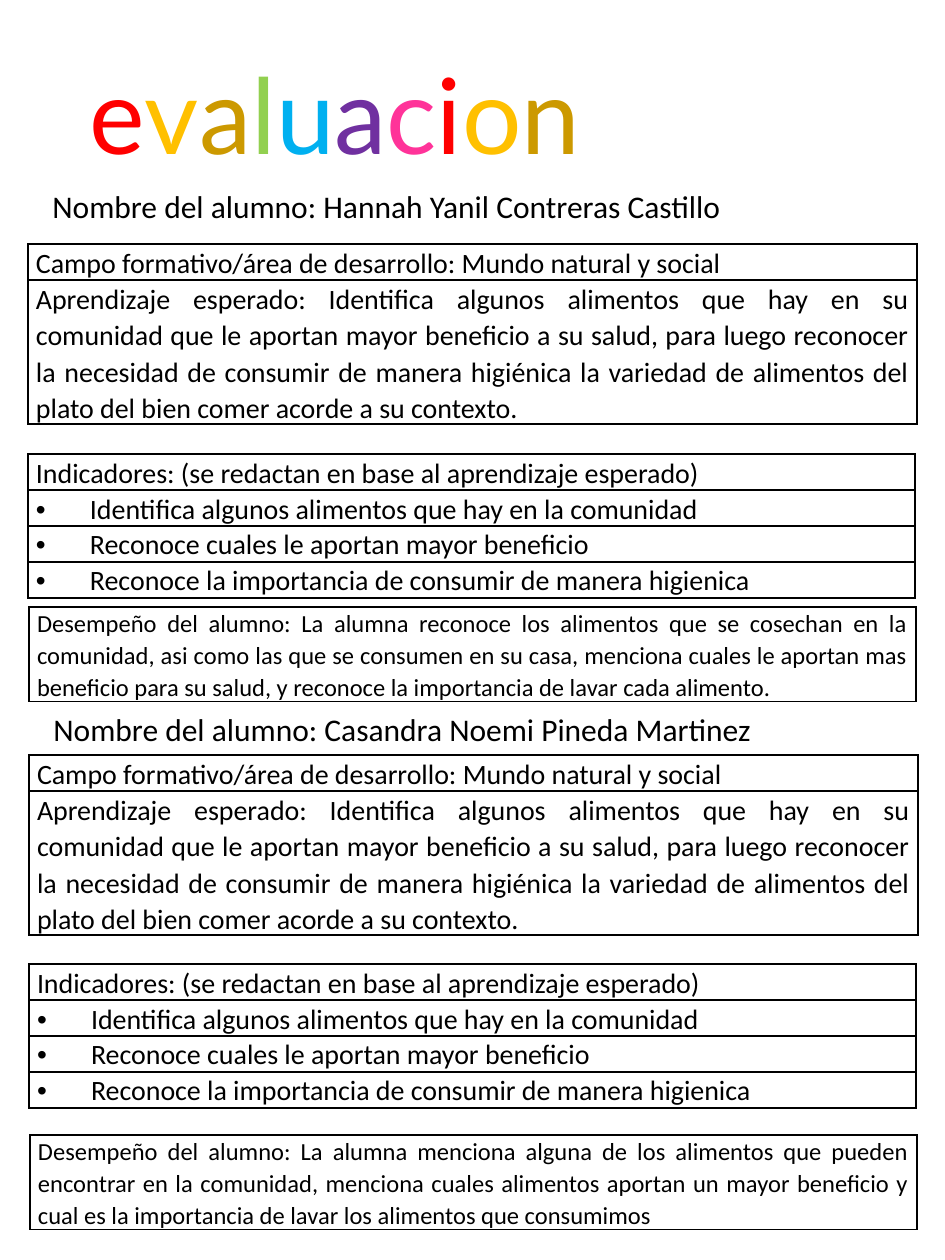
from lxml.etree import SubElement
from pptx import Presentation
from pptx.dml.color import RGBColor as RGB
from pptx.enum.text import MSO_AUTO_SIZE as Fit, PP_ALIGN as Align
from pptx.oxml.ns import qn
from pptx.util import Pt

BLACK = RGB(0, 0, 0)
RED = RGB(0xFF, 0, 0)
AMBER = RGB(0xFF, 0xC0, 0)
OCHRE = RGB(0xCC, 0x99, 0)
GREEN = RGB(0x92, 0xD0, 0x50)
BLUE = RGB(0, 0xB0, 0xF0)
PURPLE = RGB(0x70, 0x30, 0xA0)
PINK = RGB(0xFF, 0x33, 0x99)

TITLE = "evaluacion"
HUES = [RED, AMBER, OCHRE, GREEN, BLUE, PURPLE, PINK]

FIELD = [
    "Campo formativo/área de desarrollo: Mundo natural y social",
    "Aprendizaje esperado: Identifica algunos alimentos que hay en su "
    "comunidad que le aportan mayor beneficio a su salud, para luego "
    "reconocer la necesidad de consumir de manera higiénica la variedad de "
    "alimentos del plato del bien comer acorde a su contexto.",
]
SIGNS = [
    "Indicadores: (se redactan en base al aprendizaje esperado)",
    "Identifica algunos alimentos que hay en la comunidad",
    "Reconoce cuales le aportan mayor beneficio",
    "Reconoce la importancia de consumir de manera higienica",
]
# tops: name, field table, signs table, result table
PUPILS = [
    dict(name="Hannah Yanil Contreras Castillo", left=28, wide=702,
         tops=(181, 244, 454, 607),
         result="La alumna reconoce los alimentos que se cosechan en la "
                "comunidad, asi como las que se consumen en su casa, menciona "
                "cuales le aportan mas beneficio para su salud, y reconoce la "
                "importancia de lavar cada alimento."),
    dict(name="Casandra Noemi Pineda Martinez", left=29, wide=740,
         tops=(704, 755, 964, 1135),
         result="La alumna menciona alguna de los alimentos que pueden "
                "encontrar en la comunidad, menciona cuales alimentos aportan "
                "un mayor beneficio y cual es la importancia de lavar los "
                "alimentos que consumimos"),
]
ROW = 36
INDENT = 54


def px(n):
    return round(n * 914400 / 126)


def write(para, text, size=16, font="Calibri", hues=(BLACK,), body=False):
    """Add text as one run, or one run per letter when several hues are given."""
    parts = text if len(hues) > 1 else [text]
    for i, part in enumerate(parts):
        run = para.add_run()
        run.text = part
        run.font.size = Pt(size)
        run.font.name = font
        run.font.color.rgb = hues[i % len(hues)]
    if body:
        para.alignment = Align.JUSTIFY
        para.line_spacing = 1.07


def add_box(slide, left, top, wide, high, text, wrap=True, **style):
    box = slide.shapes.add_textbox(px(left), px(top), px(wide), px(high))
    frame = box.text_frame
    frame.word_wrap = wrap
    frame.auto_size = Fit.SHAPE_TO_FIT_TEXT
    write(frame.paragraphs[0], text, **style)


def add_bullet(para):
    props = para._p.get_or_add_pPr()
    props.set("marL", str(px(INDENT)))
    props.set("indent", str(-px(INDENT)))
    SubElement(props, qn("a:buFont"), typeface="Arial")
    SubElement(props, qn("a:buChar"), char="•")


def add_edges(cell):
    props = cell._tc.get_or_add_tcPr()
    for side in "LRTB":
        line = SubElement(props, qn(f"a:ln{side}"), w=str(Pt(1)))
        fill = SubElement(line, qn("a:solidFill"))
        SubElement(fill, qn("a:srgbClr"), val=str(BLACK))


def add_grid(slide, left, top, wide, rows, highs, size=16, bullets=False):
    """Add a one-column table; with bullets, every row but the first has one."""
    frame = slide.shapes.add_table(len(rows), 1, px(left), px(top),
                                   px(wide), px(sum(highs)))
    table = frame.table
    table.first_row = table.horz_banding = False
    for i, (text, high) in enumerate(zip(rows, highs)):
        table.rows[i].height = px(high)
        cell = table.cell(i, 0)
        cell.margin_left = cell.margin_right = px(8)
        cell.margin_top = cell.margin_bottom = 0
        add_edges(cell)
        cell.fill.background()
        para = cell.text_frame.paragraphs[0]
        write(para, text, size=size, body=True)
        if bullets and i:
            add_bullet(para)


def add_pupil(slide, name, left, wide, tops, result):
    head, field, signs, end = tops
    add_box(slide, left + 12, head, wide, 50, f"Nombre del alumno: {name}",
            wrap=False, size=18)
    add_grid(slide, left, field, 889, FIELD, [ROW, 4 * ROW])
    add_grid(slide, left, signs, 887, SIGNS, [ROW] * 4, bullets=True)
    add_grid(slide, left + 1, end, 887, [f"Desempeño del alumno: {result}"],
             [94], size=14)


def main():
    deck = Presentation()
    deck.slide_width, deck.slide_height = px(945), px(1260)
    slide = deck.slides.add_slide(deck.slide_layouts[6])
    add_box(slide, 77, 43, 863, 140, TITLE, size=60, font="Lato", hues=HUES)
    for pupil in PUPILS:
        add_pupil(slide, **pupil)
    deck.save("out.pptx")


if __name__ == "__main__":
    main()
